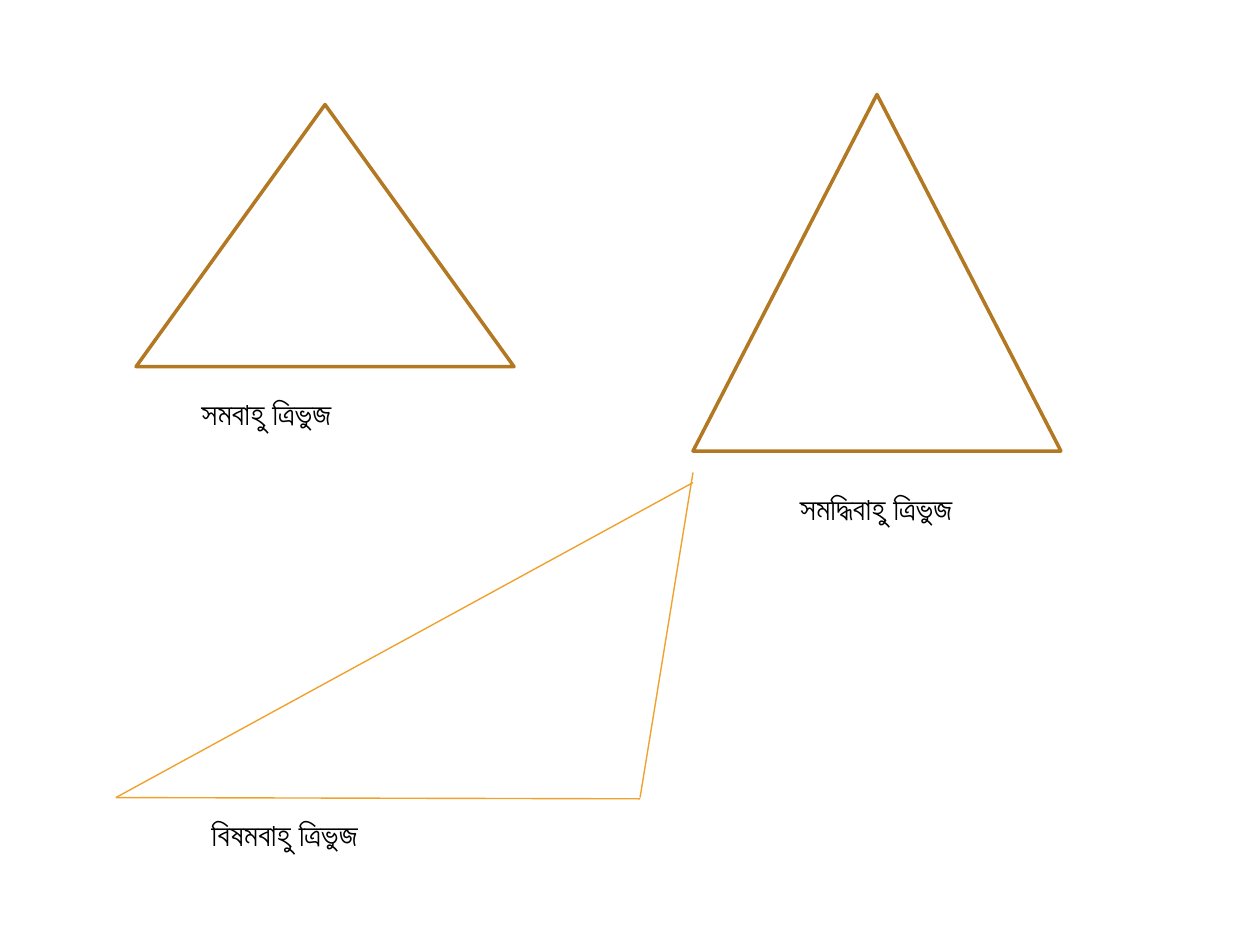
from typing import NamedTuple

from pptx import Presentation
from pptx.dml.color import RGBColor
from pptx.enum.shapes import MSO_CONNECTOR, MSO_SHAPE
from pptx.enum.text import MSO_AUTO_SIZE
from pptx.oxml.ns import qn
from pptx.shapes.group import GroupShape
from pptx.slide import Slide
from pptx.util import Inches, Pt
from lxml.etree import SubElement


class Triangle(NamedTuple):
    left: float
    top: float
    width: float
    height: float


class Side(NamedTuple):
    start_x: float
    start_y: float
    end_x: float
    end_y: float


class Caption(NamedTuple):
    text: str
    left: float
    top: float
    width: float


TRIANGLES = [
    Triangle(1.08, 0.83, 3, 2.08),
    Triangle(5.5, 0.75, 2.92, 2.83),
]
SCALENE_SIDES = [
    Side(0.92, 6.33, 5.08, 6.34),
    Side(0.92, 6.33, 5.5, 3.83),
    Side(5.5, 3.75, 5.08, 6.33),
]
CAPTIONS = [
    Caption("সমবাহু ত্রিভুজ", 1.5, 3.08, 2.75),
    Caption("বিষমবাহু ত্রিভুজ", 1.58, 6.42, 3.42),
    Caption("সমদ্ধিবাহু ত্রিভুজ", 6.25, 3.83, 1.58),
]


def color(hex_value: str) -> RGBColor:
    return RGBColor.from_string(hex_value)


def draw_triangle(slide: Slide, triangle: Triangle) -> None:
    shape = slide.shapes.add_shape(
        MSO_SHAPE.ISOSCELES_TRIANGLE, *(Inches(length) for length in triangle)
    )
    shape.shadow.inherit = False
    shape.fill.solid()
    shape.fill.fore_color.rgb = color("FFFFFF")
    shape.line.color.rgb = color("B27822")
    shape.line.width = Pt(2)


def draw_side(group: GroupShape, side: Side) -> None:
    connector = group.shapes.add_connector(
        MSO_CONNECTOR.STRAIGHT, *(Inches(length) for length in side)
    )
    connector.line.color.rgb = color("F0A22E")
    connector.line.width = Pt(0.79)
    SubElement(connector._element.spPr, qn("a:effectLst"))


def draw_caption(slide: Slide, caption: Caption) -> None:
    text_box = slide.shapes.add_textbox(
        Inches(caption.left), Inches(caption.top), Inches(caption.width), Inches(0.4)
    )
    text_frame = text_box.text_frame
    text_frame.word_wrap = True
    text_frame.auto_size = MSO_AUTO_SIZE.SHAPE_TO_FIT_TEXT
    paragraph = text_frame.paragraphs[0]
    paragraph.text = caption.text
    paragraph.font.name = "Calibri"
    paragraph.font.size = Pt(18)
    paragraph.font.color.rgb = color("000000")


def main() -> None:
    presentation = Presentation()
    presentation.slide_width = Inches(10)
    presentation.slide_height = Inches(7.5)
    slide = presentation.slides.add_slide(presentation.slide_layouts[6])

    for triangle in TRIANGLES:
        draw_triangle(slide, triangle)
    scalene_triangle = slide.shapes.add_group_shape()
    for side in SCALENE_SIDES:
        draw_side(scalene_triangle, side)
    for caption in CAPTIONS:
        draw_caption(slide, caption)

    presentation.save("out.pptx")


if __name__ == "__main__":
    main()
